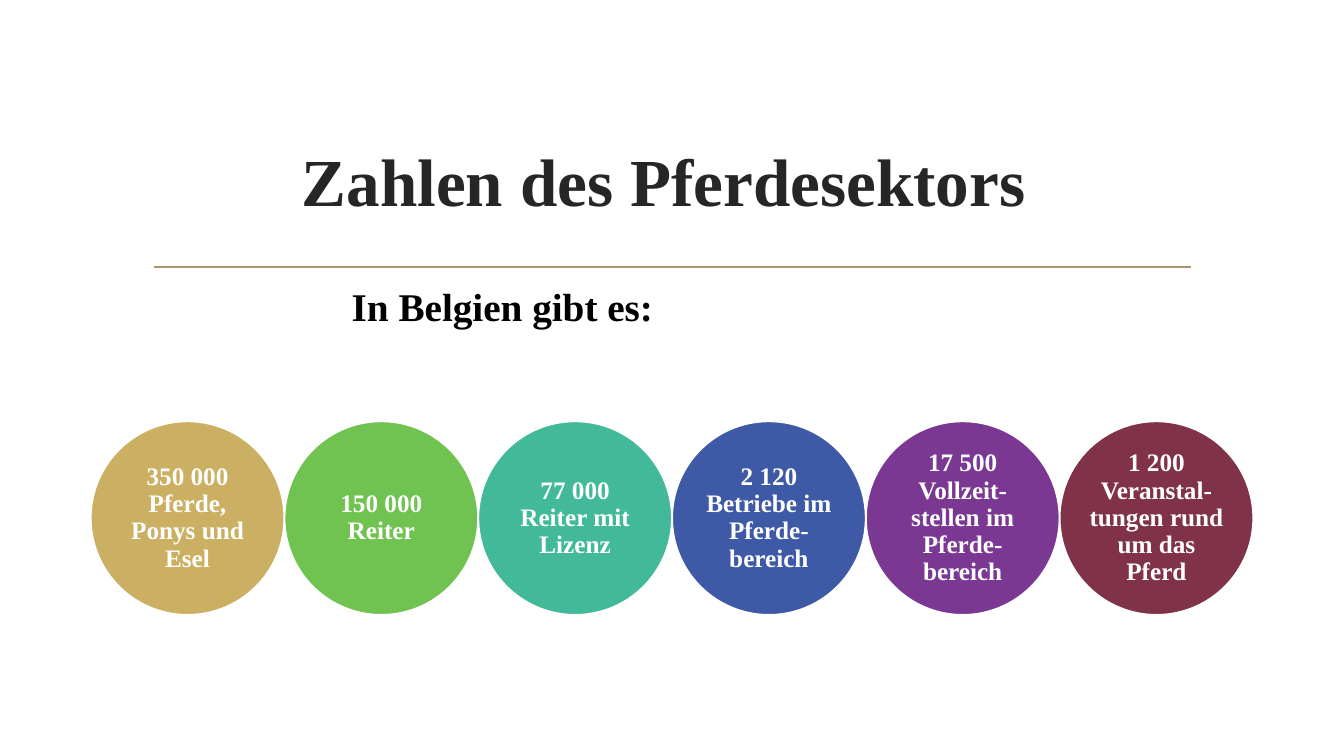
from pptx import Presentation
from pptx.dml.color import RGBColor
from pptx.enum.shapes import MSO_CONNECTOR, MSO_SHAPE
from pptx.enum.text import MSO_ANCHOR, PP_ALIGN
from pptx.oxml.ns import qn
from pptx.util import Pt
from lxml import etree

LINE, OVAL = MSO_CONNECTOR.STRAIGHT, MSO_SHAPE.OVAL
TOP, MID = MSO_ANCHOR.TOP, MSO_ANCHOR.MIDDLE
LEFT, CENTER = PP_ALIGN.LEFT, PP_ALIGN.CENTER

WHITE = RGBColor(0xFF, 0xFF, 0xFF)
BLACK = RGBColor(0, 0, 0)
DARK = RGBColor(0x26, 0x26, 0x26)
TAN = RGBColor(0xAB, 0x94, 0x6B)
GOLD = RGBColor(0xCB, 0xAF, 0x62)
GREEN = RGBColor(0x70, 0xC3, 0x51)
TEAL = RGBColor(0x42, 0xBA, 0x9A)
BLUE = RGBColor(0x3E, 0x5A, 0xA6)
PURPLE = RGBColor(0x7A, 0x38, 0x93)
WINE = RGBColor(0x80, 0x33, 0x48)

SCALE = 9144  # EMU per px, 100 px to the inch


def px(*sizes):
    return [round(size * SCALE) for size in sizes]


def write(shape, text, size, color, align=LEFT, anchor=TOP, pad=None, space=None):
    frame = shape.text_frame
    frame.word_wrap = True
    frame.vertical_anchor = anchor
    if pad is not None:
        frame.margin_left = frame.margin_right = pad
        frame.margin_top = frame.margin_bottom = pad
    para = frame.paragraphs[0]
    para.alignment = align
    para.line_spacing = space
    run = para.add_run()
    run.text = text
    font = run.font
    font.name, font.size, font.bold = "Times New Roman", Pt(size), True
    font.color.rgb = color


deck = Presentation()
deck.slide_width, deck.slide_height = px(1333, 750)
slide = deck.slides.add_slide(deck.slide_layouts[6])
shapes = slide.shapes

# Title and rule
rule = shapes.add_connector(LINE, *px(153, 265, 1181, 265))
rule.line.color.rgb = TAN
rule.line.width = Pt(1.25)
etree.SubElement(rule._element.spPr, qn("a:effectLst"))

title = shapes.add_textbox(*px(142, 107, 1050, 143))
write(title, "Zahlen des Pferdesektors ", 48, DARK, align=CENTER, anchor=MID)

# Row of touching circles
FACTS = [
    ("350 000 Pferde, Ponys und Esel", GOLD),
    ("150 000 Reiter", GREEN),
    ("77 000 Reiter mit Lizenz", TEAL),
    ("2 120 Betriebe im Pferde- bereich", BLUE),
    ("17 500 Vollzeit- stellen im Pferde- bereich", PURPLE),
    ("1 200 Veranstal-tungen rund um das Pferd", WINE),
]
START, END, SIZE = 90, 1051, 192
step = (END - START) / (len(FACTS) - 1)
for i, (fact, color) in enumerate(FACTS):
    disc = shapes.add_shape(OVAL, *px(START + i * step, 418, SIZE, SIZE))
    disc.shadow.inherit = False
    disc.fill.solid()
    disc.fill.fore_color.rgb = color
    disc.line.color.rgb = WHITE
    disc.line.width = Pt(1.25)
    write(disc, fact, 18, WHITE, align=CENTER, anchor=MID, pad=0, space=0.9)

# Lead-in
lead = shapes.add_textbox(*px(339, 275, 422, 57))
write(lead, "In Belgien gibt es:", 28, BLACK)

deck.save("out.pptx")
